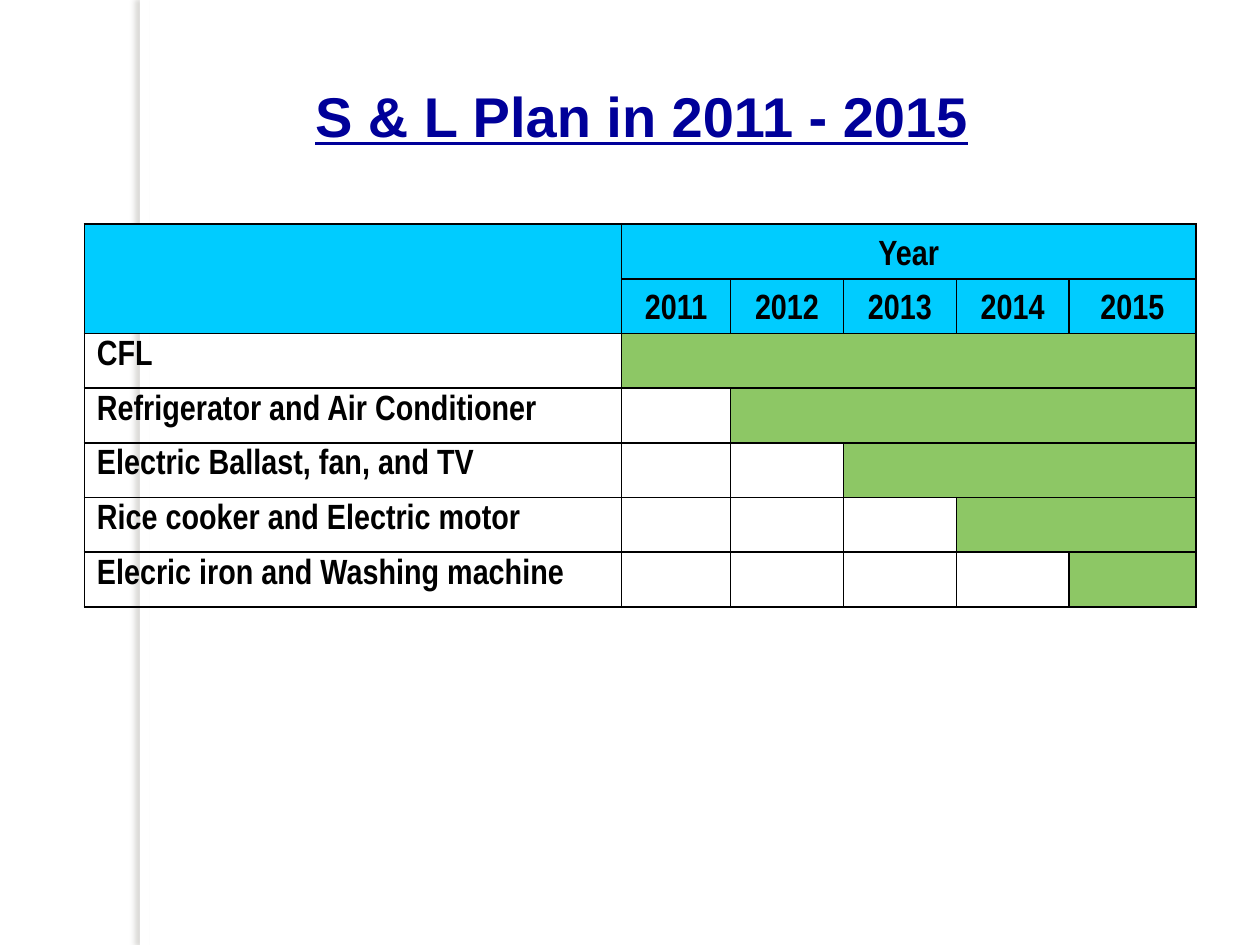
from lxml import etree
from pptx import Presentation
from pptx.dml.color import RGBColor
from pptx.enum.shapes import MSO_SHAPE
from pptx.enum.text import MSO_ANCHOR, PP_ALIGN
from pptx.oxml import parse_xml
from pptx.oxml.ns import nsdecls, qn
from pptx.util import Cm, Pt

RECT = MSO_SHAPE.RECTANGLE
TOP, MIDDLE, BOTTOM = MSO_ANCHOR.TOP, MSO_ANCHOR.MIDDLE, MSO_ANCHOR.BOTTOM
LEFT, CENTER = PP_ALIGN.LEFT, PP_ALIGN.CENTER

NAVY = RGBColor(0x00, 0x00, 0x99)
BLACK = RGBColor(0x00, 0x00, 0x00)
WHITE = RGBColor(0xFF, 0xFF, 0xFF)
CYAN = RGBColor(0x00, 0xCC, 0xFF)
GREEN = RGBColor(0x8D, 0xC7, 0x65)
SHADOW = RGBColor(0x73, 0x6F, 0x63)

# Content: each item starts in its year and runs to the last one
TITLE = "S & L Plan in 2011 - 2015"
YEARS = [2011, 2012, 2013, 2014, 2015]
PLAN = [
    ("CFL", 2011),
    ("Refrigerator and Air Conditioner", 2012),
    ("Electric Ballast, fan, and TV", 2013),
    ("Rice cooker and Electric motor", 2014),
    ("Elecric iron and Washing machine", 2015),
]
COL_WIDTHS = [10.83, 2.2, 2.27, 2.28, 2.27, 2.56]
ROW_HEIGHT = 1.1
HEADER_ROWS = 2


def write(tf, text, size=20, font="Arial Narrow", color=BLACK, align=LEFT,
          underline=False, spacing=None):
    p = tf.paragraphs[0]
    p.alignment = align
    p.line_spacing = spacing
    r = p.add_run()
    r.text = text
    r.font.size, r.font.name = Pt(size), font
    r.font.bold, r.font.underline = True, underline
    r.font.color.rgb = color


def add_borders(cell):
    tc_pr = cell._tc.get_or_add_tcPr()
    for i, side in enumerate(("lnL", "lnR", "lnT", "lnB")):
        ln = parse_xml(
            f'<a:{side} {nsdecls("a")} w="{Pt(1)}"><a:solidFill>'
            f'<a:srgbClr val="{BLACK}"/></a:solidFill></a:{side}>')
        tc_pr.insert(i, ln)


def paint(cell, color):
    cell.fill.solid()
    cell.fill.fore_color.rgb = color


prs = Presentation()
prs.slide_width, prs.slide_height = Cm(25.4), Cm(19.05)
s = prs.slides.add_slide(prs.slide_layouts[6])

# White strip casting a soft shadow to the left
strip = s.shapes.add_shape(RECT, Cm(2.82), 0, Cm(0.2), prs.slide_height)
strip.shadow.inherit = False
strip.fill.solid()
strip.fill.fore_color.rgb = WHITE
strip.line.fill.background()
effects = strip._element.spPr.find(qn("a:effectLst"))
shadow = etree.SubElement(effects, qn("a:outerShdw"), blurRad=str(Pt(3)),
                          dist=str(Pt(3)), dir="10800000", rotWithShape="0")
tint = etree.SubElement(shadow, qn("a:srgbClr"), val=str(SHADOW))
etree.SubElement(tint, qn("a:alpha"), val="25000")

# Title
tf = s.shapes.add_textbox(Cm(2.49), Cm(1.52), Cm(20.9), Cm(1.47)).text_frame
tf.word_wrap = True
tf.vertical_anchor = MIDDLE
write(tf, TITLE, size=32, font="Arial", color=NAVY, align=CENTER,
      underline=True, spacing=1.1)

# Plan table
n_rows, n_cols = HEADER_ROWS + len(PLAN), 1 + len(YEARS)
last = n_cols - 1
table = s.shapes.add_table(n_rows, n_cols, Cm(1.7), Cm(4.52),
                           Cm(sum(COL_WIDTHS)), Cm(ROW_HEIGHT * n_rows)).table
for col, width in zip(table.columns, COL_WIDTHS):
    col.width = Cm(width)
for row in table.rows:
    row.height = Cm(ROW_HEIGHT)
for i in range(n_rows):
    for j in range(n_cols):
        cell = table.cell(i, j)
        cell.vertical_anchor = BOTTOM if i < HEADER_ROWS else TOP
        if i < HEADER_ROWS:
            paint(cell, CYAN)
        else:
            cell.fill.background()
        add_borders(cell)

# Header
table.cell(0, 0).merge(table.cell(1, 0))
table.cell(0, 1).merge(table.cell(0, last))
write(table.cell(0, 1).text_frame, "Year", align=CENTER)
for j, year in enumerate(YEARS, 1):
    write(table.cell(1, j).text_frame, str(year), align=CENTER)

# Items and their green bars
for i, (item, start) in enumerate(PLAN, HEADER_ROWS):
    write(table.cell(i, 0).text_frame, item)
    first = 1 + YEARS.index(start)
    for j in range(first, n_cols):
        paint(table.cell(i, j), GREEN)
    if first < last:
        table.cell(i, first).merge(table.cell(i, last))

prs.save("out.pptx")
